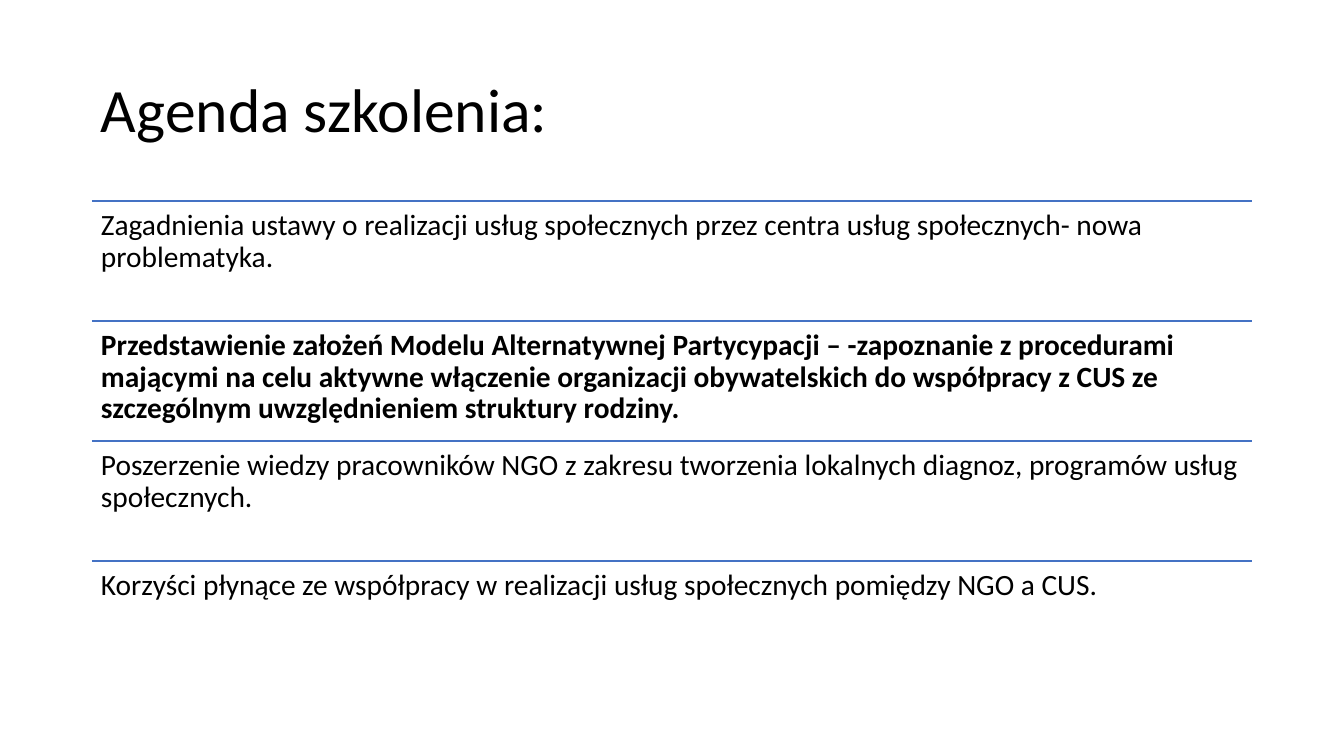
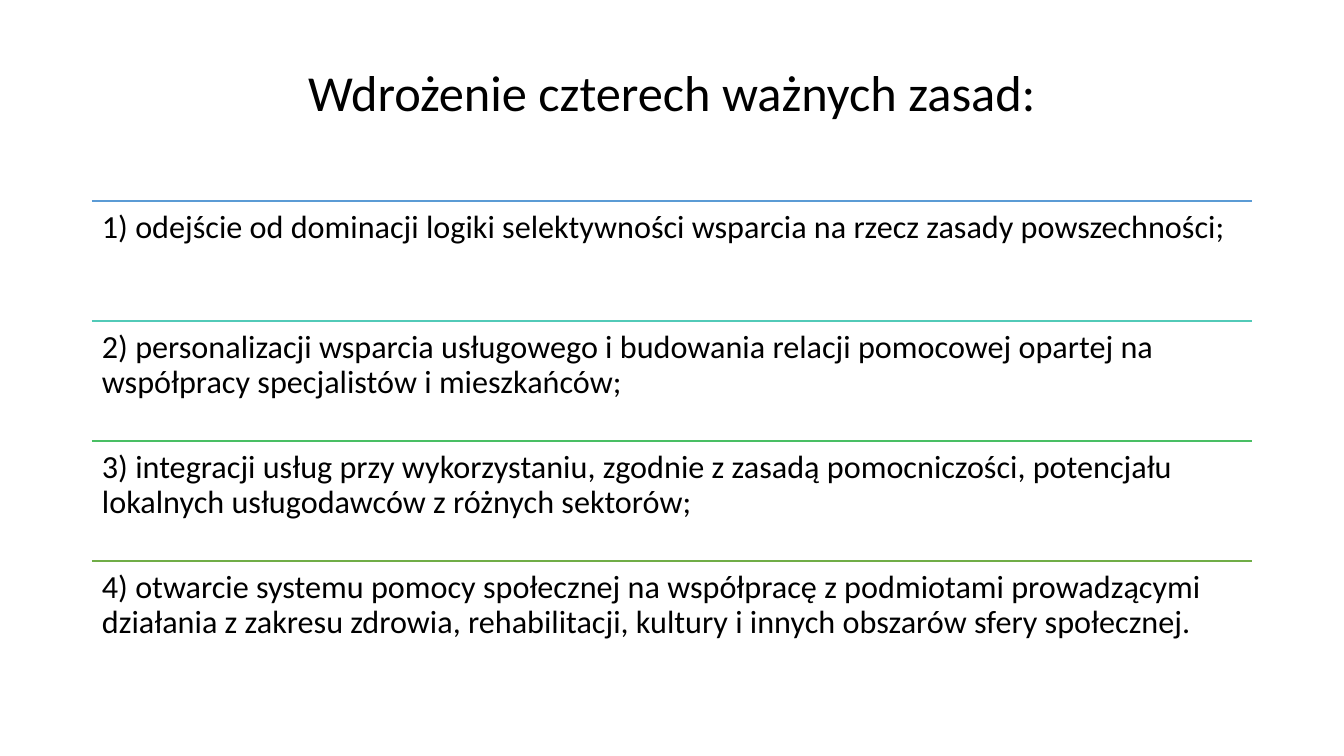
from dataclasses import dataclass

from lxml.etree import SubElement
from pptx import Presentation
from pptx.dml.color import RGBColor
from pptx.enum.shapes import MSO_CONNECTOR as Connector
from pptx.enum.text import MSO_ANCHOR as Anchor, MSO_AUTO_SIZE as AutoSize, PP_ALIGN as Align
from pptx.oxml.ns import qn
from pptx.util import Emu, Pt


@dataclass(frozen=True)
class Theme:
    font: str = "Calibri"
    text: str = "000000"
    blue: str = "4472C4"
    rule_gradient: tuple = ("5B9BD5", "52CAB8", "49BF64", "70AD47")
    rule_width: int = 1
    line_spacing: float = 0.9


theme = Theme()

# Lengths are px on a 1344 x 756 slide
SCALE = 12192000 / 1344
LEFT, WIDTH = 92, 1160
FIRST_ROW, ROW_HEIGHT = 201, 120


def px(length):
    return Emu(round(length * SCALE))


def write_text(shape, text, *, size, bold=False, align=Align.LEFT, anchor=Anchor.TOP,
               inset_x=9, inset_y=5):
    frame = shape.text_frame
    frame.word_wrap = True
    frame.auto_size = AutoSize.NONE
    frame.vertical_anchor = anchor
    frame.margin_left = frame.margin_right = px(inset_x)
    frame.margin_top = frame.margin_bottom = px(inset_y)
    paragraph = frame.paragraphs[0]
    paragraph.alignment = align
    paragraph.line_spacing = theme.line_spacing
    run = paragraph.add_run()
    run.text = text
    run.font.name = theme.font
    run.font.size = Pt(size)
    run.font.bold = bold
    run.font.color.rgb = RGBColor.from_string(theme.text)


# Content of the two list slides
slides = [
    {
        "title": "Agenda szkolenia:",
        "title_top": 40,
        "title_height": 146,
        "title_format": {"size": 44, "anchor": Anchor.MIDDLE},
        "item_size": 21,
        "item_inset": 9,
        "bold_row": 1,
        "rules": (theme.blue,) * 4,
        "items": [
            "Zagadnienia ustawy o realizacji usług społecznych przez centra usług "
            "społecznych- nowa problematyka.",
            "Przedstawienie założeń Modelu Alternatywnej Partycypacji – -zapoznanie z "
            "procedurami mającymi na celu aktywne włączenie organizacji obywatelskich do "
            "współpracy z CUS ze szczególnym uwzględnieniem struktury rodziny.",
            "Poszerzenie wiedzy pracowników NGO z zakresu tworzenia lokalnych diagnoz, "
            "programów usług społecznych.",
            "Korzyści płynące ze współpracy w realizacji usług społecznych pomiędzy NGO a CUS.",
        ],
    },
    {
        "title": "Wdrożenie czterech ważnych zasad:",
        "title_top": 61,
        "title_height": 125,
        "title_format": {"size": 36, "align": Align.CENTER, "inset_y": 7},
        "item_size": 23,
        "item_inset": 10,
        "bold_row": None,
        "rules": theme.rule_gradient,
        "items": [
            "1) odejście od dominacji logiki selektywności wsparcia na rzecz zasady "
            "powszechności;",
            "2) personalizacji wsparcia usługowego i budowania relacji pomocowej opartej na "
            "współpracy specjalistów i mieszkańców;",
            "3) integracji usług przy wykorzystaniu, zgodnie z zasadą pomocniczości, "
            "potencjału lokalnych usługodawców z różnych sektorów;",
            "4) otwarcie systemu pomocy społecznej na współpracę z podmiotami prowadzącymi "
            "działania z zakresu zdrowia, rehabilitacji, kultury i innych obszarów sfery "
            "społecznej.",
        ],
    },
]

presentation = Presentation()
presentation.slide_width = px(1344)
presentation.slide_height = px(756)
title_only = presentation.slide_layouts.get_by_name("Title Only")

for content in slides:
    slide = presentation.slides.add_slide(title_only)

    # Title
    title = slide.shapes.title
    title.left, title.top = px(LEFT), px(content["title_top"])
    title.width, title.height = px(WIDTH), px(content["title_height"])
    write_text(title, content["title"], **content["title_format"])

    # Rows, each under its own rule
    for row, (item, color) in enumerate(zip(content["items"], content["rules"])):
        top = px(FIRST_ROW + row * ROW_HEIGHT)
        rule = slide.shapes.add_connector(
            Connector.STRAIGHT, px(LEFT), top, px(LEFT + WIDTH), top)
        rule.line.color.rgb = RGBColor.from_string(color)
        rule.line.width = Pt(theme.rule_width)
        SubElement(rule._element.spPr, qn("a:effectLst"))

        box = slide.shapes.add_textbox(px(LEFT), top, px(WIDTH), px(ROW_HEIGHT))
        write_text(box, item, size=content["item_size"], bold=row == content["bold_row"],
                   inset_x=content["item_inset"], inset_y=content["item_inset"])

presentation.save("out.pptx")
